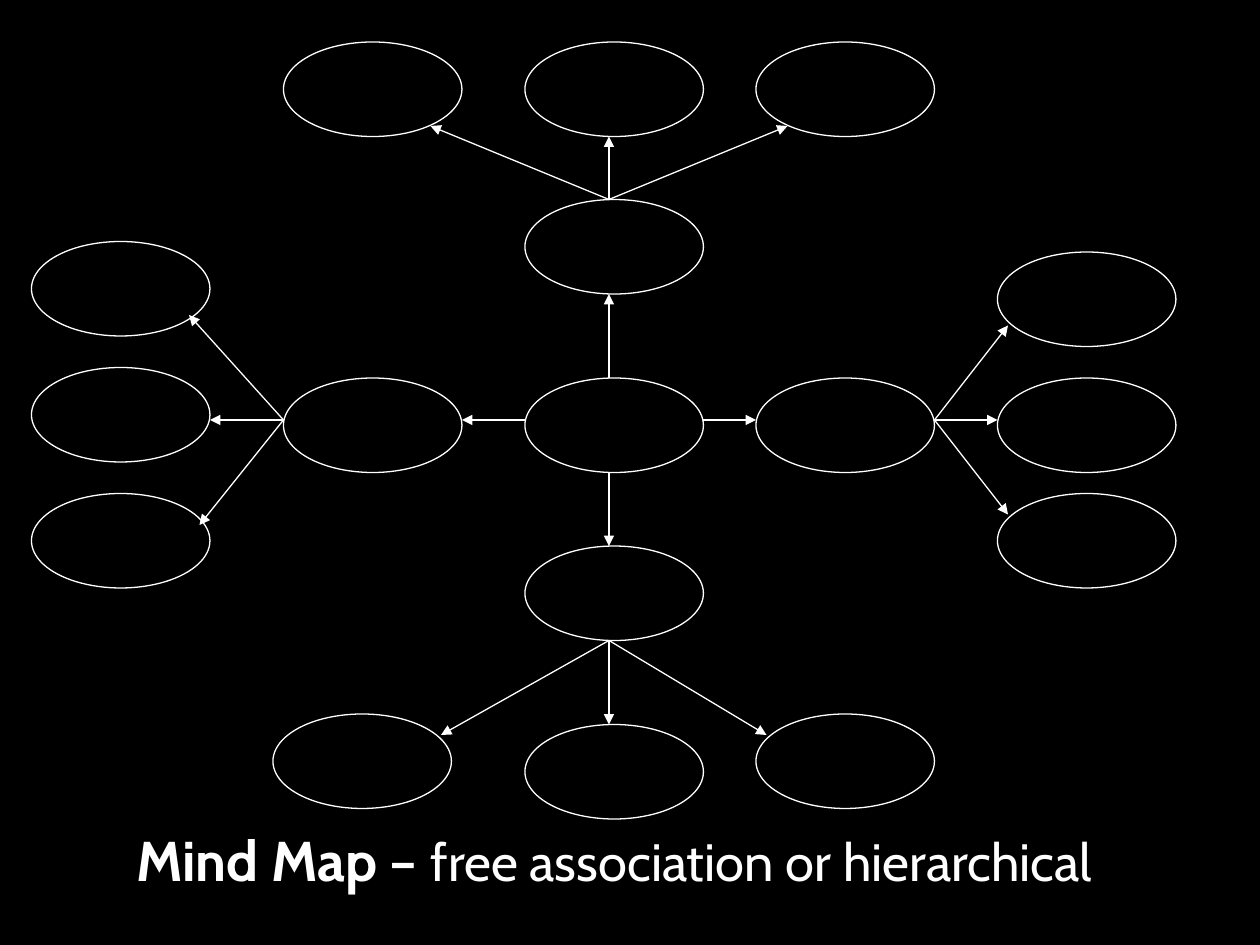
"""Build a mind map slide: a hub, four branches and their leaves."""
from typing import Any, NamedTuple

from lxml import etree
from pptx import Presentation
from pptx import util as u
from pptx.dml.color import RGBColor
from pptx.enum import shapes, text
from pptx.oxml import ns

PX = u.Inches(1) // 120
COLOURS = {"ground": "000000", "ink": "FFFFFF"}
NODE_WIDTH, NODE_HEIGHT = 170, 90
LINE_WIDTH = u.Pt(0.75)


class Point(NamedTuple):
    x: int
    y: int


class Branch(NamedTuple):
    node: Point
    hub_exit: Point
    node_entry: Point
    fork: Point
    leaves: list[Point]
    tips: list[Point]


class Span(NamedTuple):
    words: str
    size: int
    bold: bool


HUB = Point(500, 360)
BRANCHES = [
    Branch(Point(500, 190), Point(580, 360), Point(580, 280), Point(580, 190),
           [Point(x, 40) for x in (270, 500, 720)],
           [Point(410, 120), Point(580, 190), Point(580, 130), Point(750, 120)]),
    Branch(Point(720, 360), Point(670, 400), Point(720, 400), Point(890, 400),
           [Point(950, y) for y in (240, 360, 470)],
           [Point(960, 310), Point(950, 400), Point(960, 490)]),
    Branch(Point(500, 520), Point(580, 450), Point(580, 520), Point(580, 610),
           [Point(260, 680), Point(500, 690), Point(720, 680)],
           [Point(420, 700), Point(580, 690), Point(730, 700)]),
    Branch(Point(270, 360), Point(500, 400), Point(440, 400), Point(270, 400),
           [Point(30, y) for y in (230, 350, 470)],
           [Point(180, 300), Point(200, 400), Point(190, 500)]),
]
CAPTION = [Span("Mind Map – ", 32, True),
           Span("free association or hierarchical", 30, False)]


def colour(name: str) -> RGBColor:
    """Return a named colour."""
    return RGBColor.from_string(COLOURS[name])


def apply(target: Any, values: dict[str, Any]) -> None:
    """Set each named attribute on the target."""
    for name, value in values.items():
        setattr(target, name, value)


def draw_line(line: Any) -> None:
    """Give a line its colour and width."""
    line.color.rgb = colour("ink")
    line.width = LINE_WIDTH


def add_node(page: Any, corner: Point) -> None:
    """Draw an empty ellipse from its top left corner."""
    lengths = (length * PX for length in (*corner, NODE_WIDTH, NODE_HEIGHT))
    node = page.shapes.add_shape(shapes.MSO_SHAPE.OVAL, *lengths)
    node.shadow.inherit = False
    node.fill.background()
    draw_line(node.line)


def add_arrow(page: Any, start: Point, end: Point) -> None:
    """Draw a straight arrow with a triangle at its end."""
    lengths = (length * PX for length in (*start, *end))
    arrow = page.shapes.add_connector(shapes.MSO_CONNECTOR.STRAIGHT, *lengths)
    draw_line(arrow.line)
    etree.SubElement(arrow.line._get_or_add_ln(), ns.qn("a:tailEnd"), type="triangle")
    etree.SubElement(arrow._element.spPr, ns.qn("a:effectLst"))


def add_branch(page: Any, branch: Branch) -> None:
    """Draw a branch with its leaves and arrows."""
    for corner in (branch.node, *branch.leaves):
        add_node(page, corner)
    add_arrow(page, branch.hub_exit, branch.node_entry)
    for tip in branch.tips:
        add_arrow(page, branch.fork, tip)


def add_caption(page: Any, spans: list[Span]) -> None:
    """Write the centred caption under the map."""
    box = page.shapes.add_textbox(*(length * PX for length in (70, 780, 1030, 76)))
    apply(box.text_frame, {"word_wrap": True,
                           "auto_size": text.MSO_AUTO_SIZE.SHAPE_TO_FIT_TEXT})
    para = box.text_frame.paragraphs[0]
    para.alignment = text.PP_ALIGN.CENTER
    for span in spans:
        run = para.add_run()
        run.text = span.words
        apply(run.font, {"name": "Cabin", "size": u.Pt(span.size), "bold": span.bold})
        run.font.color.rgb = colour("ink")


def main() -> None:
    """Build and save the deck."""
    deck = Presentation()
    apply(deck, {"slide_width": 1200 * PX, "slide_height": 900 * PX})
    page = deck.slides.add_slide(deck.slide_layouts[6])
    page.background.fill.solid()
    page.background.fill.fore_color.rgb = colour("ground")
    add_node(page, HUB)
    for branch in BRANCHES:
        add_branch(page, branch)
    add_caption(page, CAPTION)
    deck.save("out.pptx")


if __name__ == "__main__":
    main()
